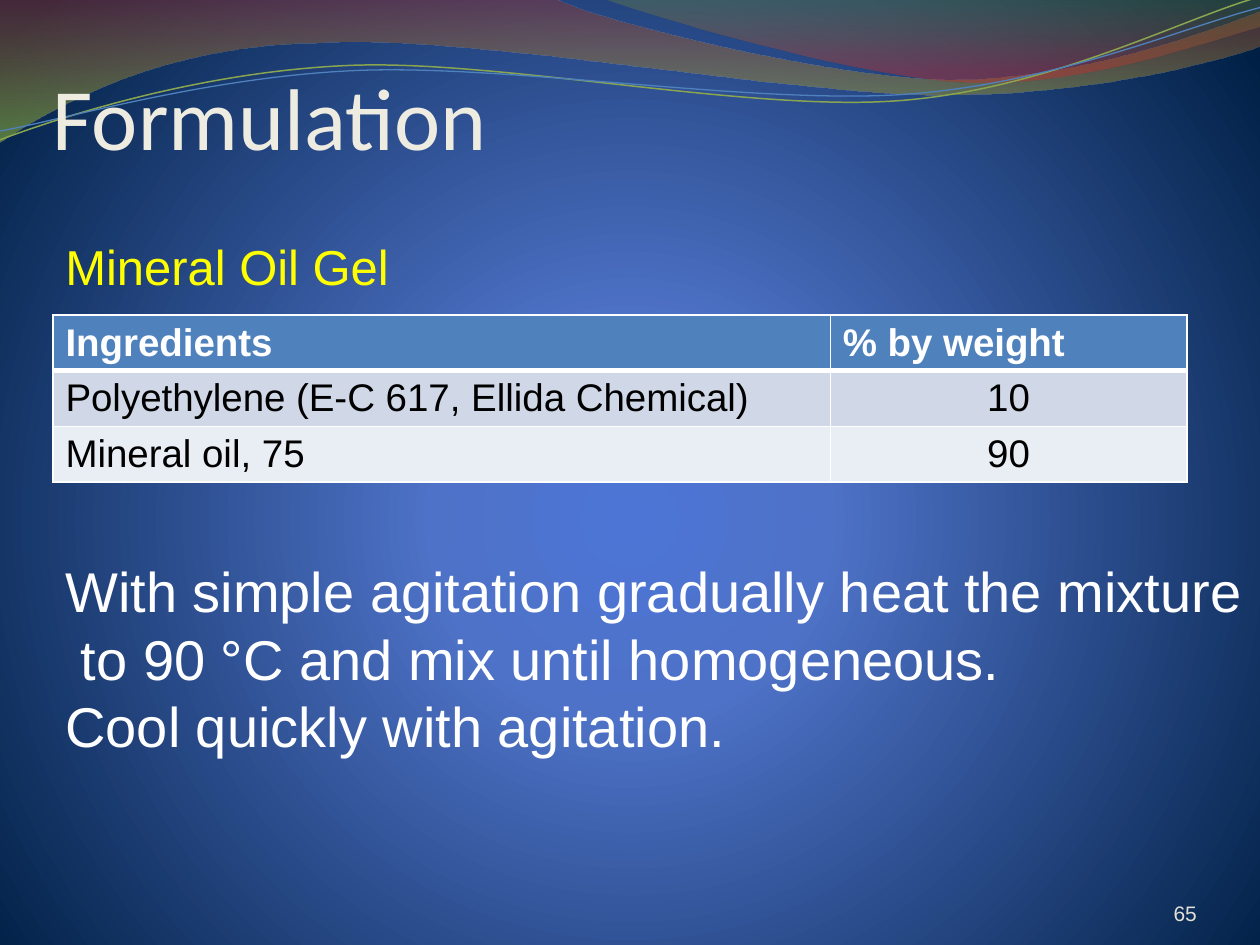
from dataclasses import dataclass
from typing import Optional

from lxml.etree import SubElement
from pptx import Presentation
from pptx.dml.color import RGBColor
from pptx.enum.text import MSO_ANCHOR, MSO_AUTO_SIZE, PP_ALIGN
from pptx.oxml.ns import qn
from pptx.util import Inches, Pt


@dataclass(frozen=True)
class Theme:
    white: str = "FFFFFF"
    black: str = "000000"
    title: str = "EEECE1"
    heading: str = "FFFF00"
    number: str = "E3E1D7"
    header_fill: str = "4F81BD"
    bands: tuple = ("D0D8E8", "E9EDF4")
    background: tuple = ((0, "4D75D6", 100), (25, "4E72C7", 100), (100, "001F44", 100))
    body_font: str = "Arial"
    title_font: str = "Calibri"
    title_size: int = 50
    body_size: int = 32
    heading_size: int = 28
    table_size: int = 22
    number_size: int = 12


@dataclass(frozen=True)
class Wave:
    """A start, then one tuple per segment: a line end or a cubic's three points."""
    start: tuple
    segments: tuple
    stops: tuple = ()
    line: Optional[str] = None
    width: float = 0


T = Theme()
WAVES = (
    Wave((0, -0.01), (
        ((4.4, -0.01),),
        ((4.76, 0.17), (6.64, 0.63), (7.58, 0.63)),
        ((8.53, 0.63), (9.58, 0.26), (10, 0.09)),
        ((10.01, 0.36),),
        ((9.83, 0.44), (8.7, 0.76), (7.46, 0.75)),
        ((6.22, 0.75), (3.82, 0.28), (2.57, 0.34)),
        ((1.29, 0.35), (0.46, 0.83), (-0.01, 1.13)),
        ((0, -0.01),),
    ), stops=((0, "973330", 45), (100, "95C238", 55))),
    Wave((4.79, -0.01), (
        ((5.09, 0.11), (6.82, 0.62), (7.69, 0.65)),
        ((8.56, 0.69), (9.61, 0.32), (10, 0.21)),
        ((10, 0),),
        ((4.79, -0.01),),
    ), stops=((0, "769537", 30), (80, "BE3330", 45))),
    Wave((0, 1.11), (
        ((0.48, 0.93), (1.58, 0.57), (2.77, 0.52)),
        ((3.95, 0.47), (5.93, 0.89), (7.13, 0.8)),
        ((8.33, 0.71), (9.38, 0.15), (9.98, -0.02)),
    ), line="89A54F", width=0.85),
    Wave((0, 1.04), (
        ((0.47, 0.96), (1.64, 0.61), (2.83, 0.56)),
        ((4.03, 0.51), (5.97, 0.83), (7.17, 0.75)),
        ((8.36, 0.67), (9.41, 0.21), (10, 0.06)),
    ), line="4F81BD", width=0.75),
)
ROWS = (
    ("Ingredients", "% by weight"),
    ("Polyethylene (E-C 617, Ellida Chemical)", "10"),
    ("Mineral oil, 75", "90"),
)


def rgb(color: str) -> RGBColor:
    return RGBColor.from_string(color)


def add_stops(grad, stops: tuple) -> None:
    gs_lst = SubElement(grad, qn("a:gsLst"))
    for pos, color, opacity in stops:
        gs = SubElement(gs_lst, qn("a:gs"), pos=str(pos * 1000))
        clr = SubElement(gs, qn("a:srgbClr"), val=color)
        if opacity < 100:
            SubElement(clr, qn("a:alpha"), val=str(opacity * 1000))


def set_background(slide) -> None:
    slide.background.fill.solid()
    bg_pr = slide.element.find(".//" + qn("p:bgPr"))
    bg_pr.remove(bg_pr[0])
    grad = SubElement(bg_pr, qn("a:gradFill"), rotWithShape="1")
    bg_pr.insert(0, grad)
    add_stops(grad, T.background)
    circle = SubElement(grad, qn("a:path"), path="circle")
    SubElement(circle, qn("a:fillToRect"), l="10000", t="110000", r="10000", b="100000")


def curve_segments(sp, segments: tuple) -> None:
    """Join the straight steps of each three-point segment into one cubic curve."""
    outline = sp.element.spPr.find(".//" + qn("a:path"))
    steps = iter(outline.findall(qn("a:lnTo")))
    for seg in segments:
        parts = [next(steps) for _ in seg]
        if len(parts) == 3:
            cubic = SubElement(outline, qn("a:cubicBezTo"))
            parts[0].addprevious(cubic)
            for part in parts:
                cubic.append(part[0])
                outline.remove(part)


def add_wave(slide, wave: Wave) -> None:
    points = [(Inches(x), Inches(y)) for seg in wave.segments for x, y in seg]
    fb = slide.shapes.build_freeform(Inches(wave.start[0]), Inches(wave.start[1]))
    fb.add_line_segments(points, close=bool(wave.stops))
    sp = fb.convert_to_shape()
    curve_segments(sp, wave.segments)
    sp.shadow.inherit = False
    if wave.stops:
        sp.line.fill.background()
        sp.fill.gradient()
        sp.fill.gradient_angle = 270
        grad = sp.element.spPr.find(qn("a:gradFill"))
        grad.remove(grad.find(qn("a:gsLst")))
        add_stops(grad, wave.stops)
        grad.insert(0, grad[-1])
    else:
        sp.fill.background()
        sp.line.color.rgb = rgb(wave.line)
        sp.line.width = Pt(wave.width)


def add_run(p, text: str, size: float, color: str, font: str = T.body_font,
            bold: bool = False) -> None:
    r = p.add_run()
    r.text = text
    r.font.size, r.font.name, r.font.bold = Pt(size), font, bold
    r.font.color.rgb = rgb(color)


def add_text(slide, box: tuple, lines: tuple, size: float, color: str) -> None:
    sp = slide.shapes.add_textbox(*map(Inches, box))
    tf = sp.text_frame
    tf.word_wrap = False
    for i, line in enumerate(lines):
        p = tf.add_paragraph() if i else tf.paragraphs[0]
        p.alignment = PP_ALIGN.LEFT
        add_run(p, line, size, color)


def set_frame(tf, top: float = 0) -> None:
    tf.margin_left = tf.margin_right = tf.margin_bottom = 0
    tf.margin_top = Inches(top)
    tf.vertical_anchor = MSO_ANCHOR.BOTTOM
    tf.auto_size = MSO_AUTO_SIZE.NONE
    tf.word_wrap = True


def format_title(slide) -> None:
    sp = slide.shapes.title
    sp.left, sp.top, sp.width, sp.height = map(Inches, (0.42, 0.08, 9, 1.25))
    set_frame(sp.text_frame, 0.05)
    p = sp.text_frame.paragraphs[0]
    p.alignment = PP_ALIGN.LEFT
    add_run(p, "Formulation", T.title_size, T.title, T.title_font)
    sp.element.getparent().append(sp.element)  # in front of the waves


def set_borders(cell, bottom: float, top: float) -> None:
    tc_pr = cell._tc.get_or_add_tcPr()
    for i, (side, width) in enumerate((("L", 1), ("R", 1), ("T", top), ("B", bottom))):
        ln = SubElement(tc_pr, qn(f"a:ln{side}"), w=str(Pt(width)))
        SubElement(SubElement(ln, qn("a:solidFill")), qn("a:srgbClr"), val=T.white)
        tc_pr.insert(i, ln)


def add_ingredients(slide) -> None:
    tbl = slide.shapes.add_table(len(ROWS), 2, *map(Inches, (0.42, 2.5, 9, 1.32))).table
    for col, width in zip(tbl.columns, (6.17, 2.83)):
        col.width = Inches(width)
    for i, row in enumerate(ROWS):
        header = i == 0
        for j, text in enumerate(row):
            cell = tbl.cell(i, j)
            cell.fill.solid()
            cell.fill.fore_color.rgb = rgb(T.header_fill if header else T.bands[(i - 1) % 2])
            p = cell.text_frame.paragraphs[0]
            p.alignment = PP_ALIGN.CENTER if j and not header else PP_ALIGN.LEFT
            add_run(p, text, T.table_size, T.white if header else T.black, bold=header)
            set_borders(cell, bottom=3 if header else 1, top=3 if i == 1 else 1)


def add_number(slide) -> None:
    sp = slide.shapes.add_textbox(*map(Inches, (8.67, 6.95, 0.83, 0.4)))
    set_frame(sp.text_frame)
    p = sp.text_frame.paragraphs[0]
    p.alignment = PP_ALIGN.RIGHT
    add_run(p, "65", T.number_size, T.number)


def main() -> None:
    prs = Presentation()
    prs.slide_width, prs.slide_height = Inches(10), Inches(7.5)
    slide = prs.slides.add_slide(prs.slide_layouts[5])
    set_background(slide)
    for wave in WAVES:
        add_wave(slide, wave)
    format_title(slide)
    add_ingredients(slide)
    add_number(slide)
    add_text(slide, (0.42, 4.37, 9.62, 1.72), (
        "With simple agitation gradually heat the mixture",
        " to 90 °C and mix until homogeneous.",
        "Cool quickly with agitation.",
    ), T.body_size, T.white)
    add_text(slide, (0.42, 1.83, 2.8, 0.57), ("Mineral Oil Gel",), T.heading_size, T.heading)
    prs.save("out.pptx")


if __name__ == "__main__":
    main()
